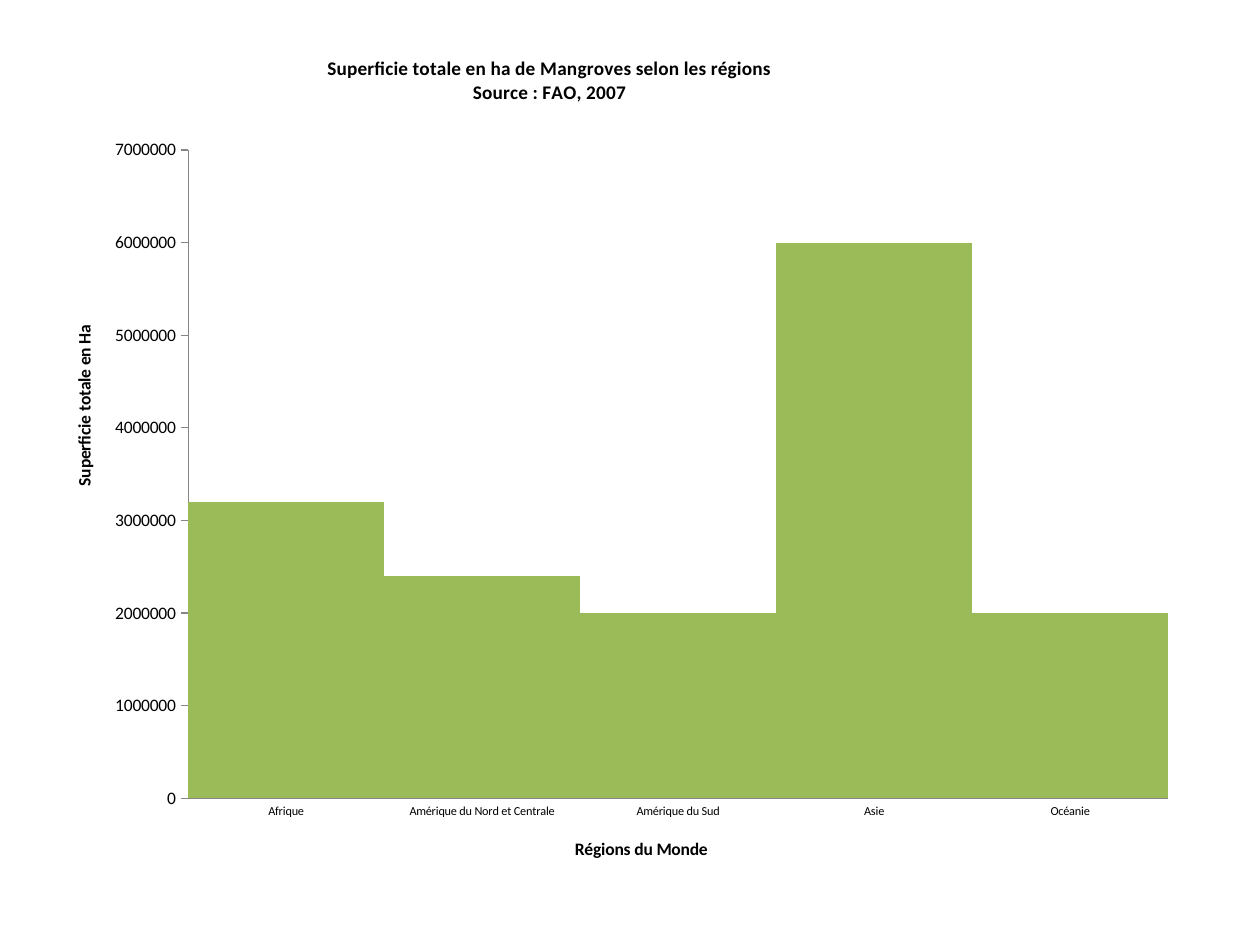
from lxml import etree
from pptx import Presentation
from pptx import util as u
from pptx.chart import data
from pptx.dml import color
from pptx.enum import chart as kinds
from pptx.oxml import ns

COLOURS = {"bar": "9BBB59", "axis": "868686", "text": "000000"}
FONT = "Calibri"
AREAS = {
    "Afrique": 3200000,
    "Amérique du Nord et Centrale": 2400000,
    "Amérique du Sud": 2000000,
    "Asie": 6000000,
    "Océanie": 2000000,
}


def style_font(font, size, bold=False):
    font.name = FONT
    font.size = u.Pt(size)
    font.bold = bold
    font.color.rgb = color.RGBColor.from_string(COLOURS["text"])


def set_layout(element, **percents):
    for old in element.findall(ns.qn("c:layout")):
        element.remove(old)
    layout = etree.Element(ns.qn("c:layout"))
    manual = etree.SubElement(layout, ns.qn("c:manualLayout"))
    shares = {name: round(value / 100, 4) for name, value in percents.items()}
    settings = {"xMode": "edge", "yMode": "edge", **shares}
    if "w" in shares:
        settings = {"layoutTarget": "inner", **settings}
    for name, value in settings.items():
        etree.SubElement(manual, ns.qn(f"c:{name}"), val=str(value))
    caption = element.find(ns.qn("c:tx"))
    element.insert(0 if caption is None else element.index(caption) + 1, layout)


def write_title(title, lines, size, x, y):
    frame = title.text_frame
    frame.text = "\n".join(lines)
    for para in frame.paragraphs:
        style_font(para.font, size, True)
        for span in para.runs:
            style_font(span.font, size, True)
    set_layout(title.element, x=x, y=y)


def style_axis(axis, size, tick, caption, x, y):
    axis.has_major_gridlines = False
    axis.major_tick_mark = tick
    axis.minor_tick_mark = kinds.XL_TICK_MARK.NONE
    axis.format.line.color.rgb = color.RGBColor.from_string(COLOURS["axis"])
    axis.format.line.width = u.Pt(0.75)
    style_font(axis.tick_labels.font, size)
    write_title(axis.axis_title, [caption], 10, x, y)


def add_area_chart(page, left, top, width, height):
    table = data.CategoryChartData(number_format="General")
    table.categories = list(AREAS)
    table.add_series("Superficie", list(AREAS.values()))
    chart = page.shapes.add_chart(
        kinds.XL_CHART_TYPE.COLUMN_CLUSTERED, left, top, width, height, table
    ).chart
    chart.has_legend = False
    style_font(chart.font, 10)

    plot = chart.plots[0]
    plot.gap_width = 0
    plot.vary_by_categories = False
    fill = plot.series[0].format.fill
    fill.solid()
    fill.fore_color.rgb = color.RGBColor.from_string(COLOURS["bar"])

    chart.has_title = True
    heading = ["Superficie totale en ha de Mangroves selon les régions", "Source : FAO, 2007"]
    write_title(chart.chart_title, heading, 11, 24.7, 1.4)
    chart.chart_title.include_in_layout = False

    ticks = kinds.XL_TICK_MARK
    style_axis(chart.category_axis, 7, ticks.NONE, "Régions du Monde", 46.25, 93.9)
    values = chart.value_axis
    style_axis(values, 10, ticks.OUTSIDE, "Superficie totale en Ha", 2.65, 33.4)
    values.minimum_scale = 0
    values.maximum_scale = 7000000
    values.major_unit = 1000000
    area = chart.element.find(f".//{ns.qn('c:plotArea')}")
    set_layout(area, x=12.95, y=13.1, w=85.1, h=76.6)


def main():
    deck = Presentation()
    deck.slide_width, deck.slide_height = u.Inches(10), u.Inches(7.5)
    page = deck.slides.add_slide(deck.slide_layouts[6])
    add_area_chart(page, u.Inches(0.31), u.Inches(0.31), u.Inches(9.14), u.Inches(6.72))
    deck.save("out.pptx")


if __name__ == "__main__":
    main()
